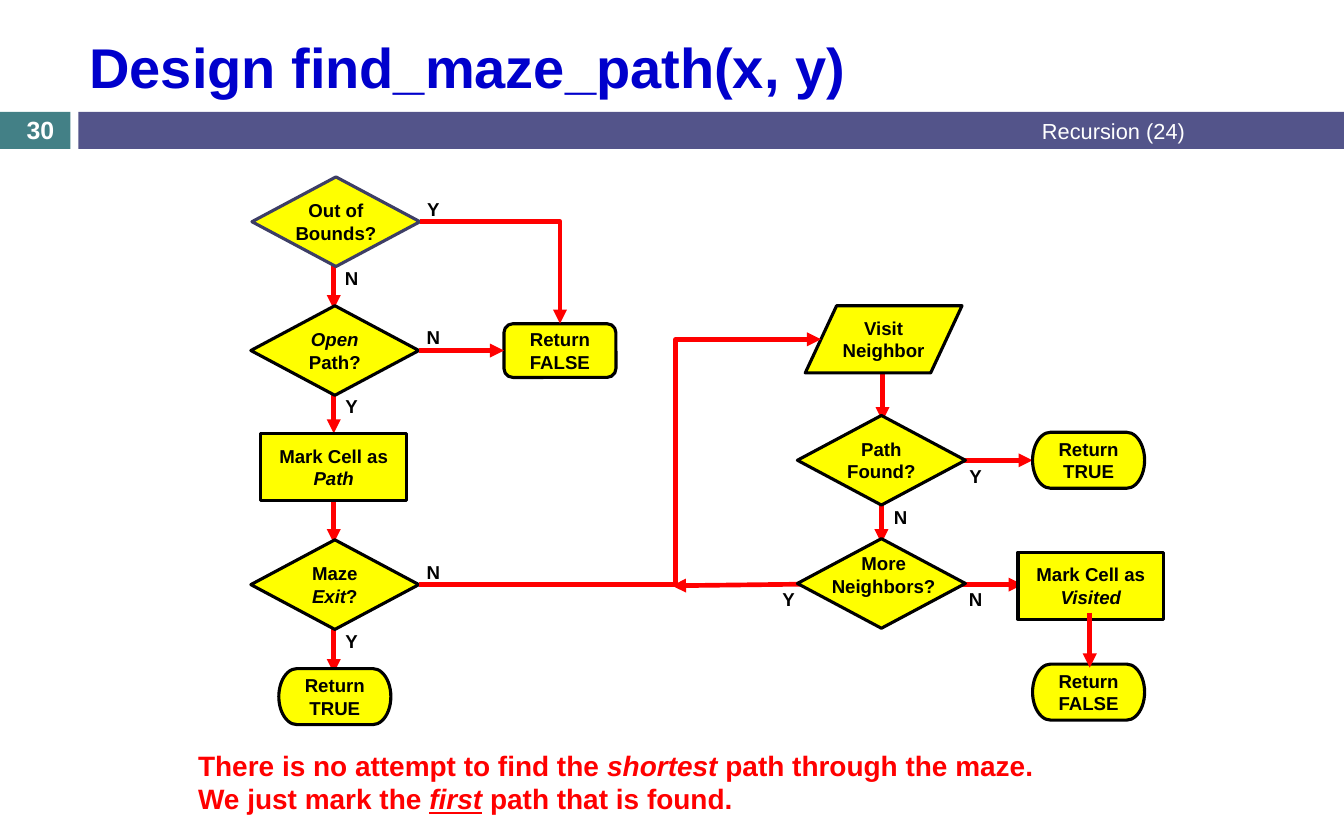
from dataclasses import dataclass

from lxml import etree
from pptx import Presentation
from pptx.dml.color import RGBColor
from pptx.enum.shapes import MSO_CONNECTOR, MSO_SHAPE
from pptx.enum.text import MSO_ANCHOR, PP_ALIGN
from pptx.oxml.ns import qn
from pptx.util import Emu, Pt

EMU_PER_PX = 9144  # 100 px to the inch
FONT = "Arial"
COLORS = {
    "title": "0000CC", "bar": "53548A", "tab": "438086", "white": "FFFFFF",
    "ink": "000000", "node": "FFFF00", "arrow": "FF0000", "start": "3D3E66",
}
DECISION = MSO_SHAPE.FLOWCHART_DECISION
PROCESS = MSO_SHAPE.FLOWCHART_PROCESS
TERMINATOR = MSO_SHAPE.FLOWCHART_TERMINATOR
ALTERNATE = MSO_SHAPE.FLOWCHART_ALTERNATE_PROCESS
DATA = MSO_SHAPE.FLOWCHART_DATA
RECTANGLE = MSO_SHAPE.RECTANGLE
STRAIGHT = MSO_CONNECTOR.STRAIGHT
ELBOW = MSO_CONNECTOR.ELBOW
LEFT, CENTER, RIGHT = PP_ALIGN.LEFT, PP_ALIGN.CENTER, PP_ALIGN.RIGHT
TOP, MIDDLE = MSO_ANCHOR.TOP, MSO_ANCHOR.MIDDLE

NODE_SIZES = {
    DECISION: (150, 80), PROCESS: (130, 60), TERMINATOR: (100, 50),
    ALTERNATE: (100, 48), DATA: (140, 60),
}
TIGHT_NODES = (DECISION, DATA)


@dataclass(frozen=True)
class Node:
    kind: MSO_SHAPE
    left: int
    top: int
    text: str = ""
    outline: str = "ink"


@dataclass(frozen=True)
class Arrow:
    start: tuple[int, int]
    end: tuple[int, int]


@dataclass(frozen=True)
class Bend:
    arrow: Arrow
    preset: str
    adjustment: int | None = None


@dataclass(frozen=True)
class Caption:
    """Text in a box; words between asterisks are italic."""
    text: str
    left: int
    top: int
    width: int
    height: int
    size: int
    color: str
    align: PP_ALIGN = CENTER
    anchor: MSO_ANCHOR = MIDDLE
    bold: bool = True
    wrap: bool = True
    tight: bool = False


NODES = (
    Node(DECISION, 225, 158, "Out of Bounds?", "start"),
    Node(DECISION, 224, 273, "*Open* Path?"),
    Node(PROCESS, 233, 387, "Mark Cell as *Path*"),
    Node(DECISION, 224, 482, "Maze *Exit*?"),
    Node(TERMINATOR, 249, 597, "Return TRUE"),
    Node(ALTERNATE, 450, 289, "Return FALSE"),
    Node(DATA, 719, 273, "Visit\nNeighbor"),
    Node(DECISION, 712, 371, "Path Found?"),
    Node(DECISION, 712, 481),
    Node(TERMINATOR, 922, 386, "Return TRUE"),
    Node(PROCESS, 909, 493, "Mark Cell as *Visited*"),
    Node(TERMINATOR, 922, 593, "Return FALSE"),
)
ARROWS_BEHIND = (
    Arrow((298, 226), (298, 276)),
    Arrow((298, 338), (298, 387)),
    Arrow((298, 435), (298, 485)),
    Arrow((298, 551), (298, 601)),
    Arrow((788, 327), (788, 376)),
    Arrow((787, 435), (787, 485)),
    Arrow((818, 411), (922, 411)),
    Arrow((809, 522), (913, 522)),
    Arrow((767, 521), (600, 523)),
)
ARROWS_IN_FRONT = (
    Arrow((973, 547), (973, 596)),
    Arrow((374, 313), (450, 313)),
)
BENDS = (
    Bend(Arrow((375, 198), (500, 289)), "bentConnector2"),
    Bend(Arrow((374, 522), (733, 303)), "bentConnector3", 63900),
)
BRANCH_LABELS = (
    ("Y", 373, 177), ("N", 300, 238), ("N", 373, 291), ("Y", 300, 353),
    ("N", 373, 501), ("Y", 300, 562), ("Y", 857, 415), ("N", 790, 452),
    ("Y", 690, 525), ("N", 857, 525),
)
CAPTIONS = (
    Caption("Design find_maze_path(x, y)", 70, 19, 1091, 80, 36, "title", LEFT),
    Caption("Recursion (24)", 475, 99, 593, 35, 14, "white", RIGHT, bold=False),
    Caption("30", 0, 101, 72, 30, 16, "white"),
    Caption("More\nNeighbors?", 732, 488, 114, 50, 12, "ink", anchor=TOP, wrap=False),
)
REMARK = Caption(
    "There is no attempt to find the *shortest *path through the maze.\n"
    "We just mark the *first* path that is found.",
    167, 663, 875, 71, 18, "arrow", LEFT, TOP,
)


def px(length: int) -> Emu:
    return Emu(length * EMU_PER_PX)


def rgb(name: str) -> RGBColor:
    return RGBColor.from_string(COLORS[name])


def write_text(frame, text: str, size: int, color: str, align=CENTER,
               anchor=MIDDLE, bold=True, tight=False) -> None:
    """Fill a frame, one paragraph a line, with *starred* words in italics."""
    frame.vertical_anchor = anchor
    if tight:
        frame.margin_left = frame.margin_right = 0
        frame.margin_top = frame.margin_bottom = 0
    frame.text = text.replace("*", "")
    for paragraph, line in zip(frame.paragraphs, text.split("\n")):
        paragraph.alignment = align
        paragraph.text = ""
        for index, part in enumerate(line.split("*")):
            if not part:
                continue
            span = paragraph.add_run()
            span.text = part
            span.font.name = FONT
            span.font.size = Pt(size)
            span.font.bold = bold
            span.font.italic = index % 2 == 1
            span.font.color.rgb = rgb(color)


def add_block(page, kind, left: int, top: int, width: int, height: int, fill: str):
    shape = page.shapes.add_shape(kind, px(left), px(top), px(width), px(height))
    shape.shadow.inherit = False
    shape.fill.solid()
    shape.fill.fore_color.rgb = rgb(fill)
    shape.line.fill.background()
    return shape


def add_node(page, node: Node) -> None:
    shape = add_block(page, node.kind, node.left, node.top,
                      *NODE_SIZES[node.kind], "node")
    shape.line.color.rgb = rgb(node.outline)
    shape.line.width = Pt(2)
    if node.text:
        write_text(shape.text_frame, node.text, 12, "ink",
                   tight=node.kind in TIGHT_NODES)


def add_arrow(page, arrow: Arrow, kind=STRAIGHT):
    connector = page.shapes.add_connector(
        kind, *map(px, arrow.start), *map(px, arrow.end))
    connector.line.color.rgb = rgb("arrow")
    connector.line.width = Pt(3)
    properties = connector._element.spPr
    line = properties.find(qn("a:ln"))
    etree.SubElement(line, qn("a:tailEnd"), type="triangle")
    etree.SubElement(properties, qn("a:effectLst"))
    return connector


def add_bend(page, bend: Bend) -> None:
    connector = add_arrow(page, bend.arrow, ELBOW)
    geometry = connector._element.spPr.find(qn("a:prstGeom"))
    geometry.set("prst", bend.preset)
    if bend.adjustment is not None:
        etree.SubElement(geometry.find(qn("a:avLst")), qn("a:gd"),
                         name="adj1", fmla=f"val {bend.adjustment}")


def add_caption(page, caption: Caption):
    box = page.shapes.add_textbox(px(caption.left), px(caption.top),
                                  px(caption.width), px(caption.height))
    box.text_frame.word_wrap = caption.wrap
    write_text(box.text_frame, caption.text, caption.size, caption.color,
               caption.align, caption.anchor, caption.bold, caption.tight)
    return box


def main() -> None:
    deck = Presentation()
    deck.slide_width, deck.slide_height = px(1200), px(750)
    page = deck.slides.add_slide(deck.slide_layouts[6])

    add_block(page, RECTANGLE, 0, 100, 63, 33, "tab")
    add_block(page, RECTANGLE, 70, 100, 1130, 33, "bar")
    for arrow in ARROWS_BEHIND:
        add_arrow(page, arrow)
    for node in NODES:
        add_node(page, node)
    for arrow in ARROWS_IN_FRONT:
        add_arrow(page, arrow)
    for bend in BENDS:
        add_bend(page, bend)
    for text, left, top in BRANCH_LABELS:
        add_caption(page, Caption(text, left, top, 28, 20, 12, "ink",
                                  anchor=TOP, tight=True))
    for caption in CAPTIONS:
        add_caption(page, caption)
    remark = add_caption(page, REMARK)
    remark.text_frame.paragraphs[1].runs[1].font.underline = True

    deck.save("out.pptx")


if __name__ == "__main__":
    main()
